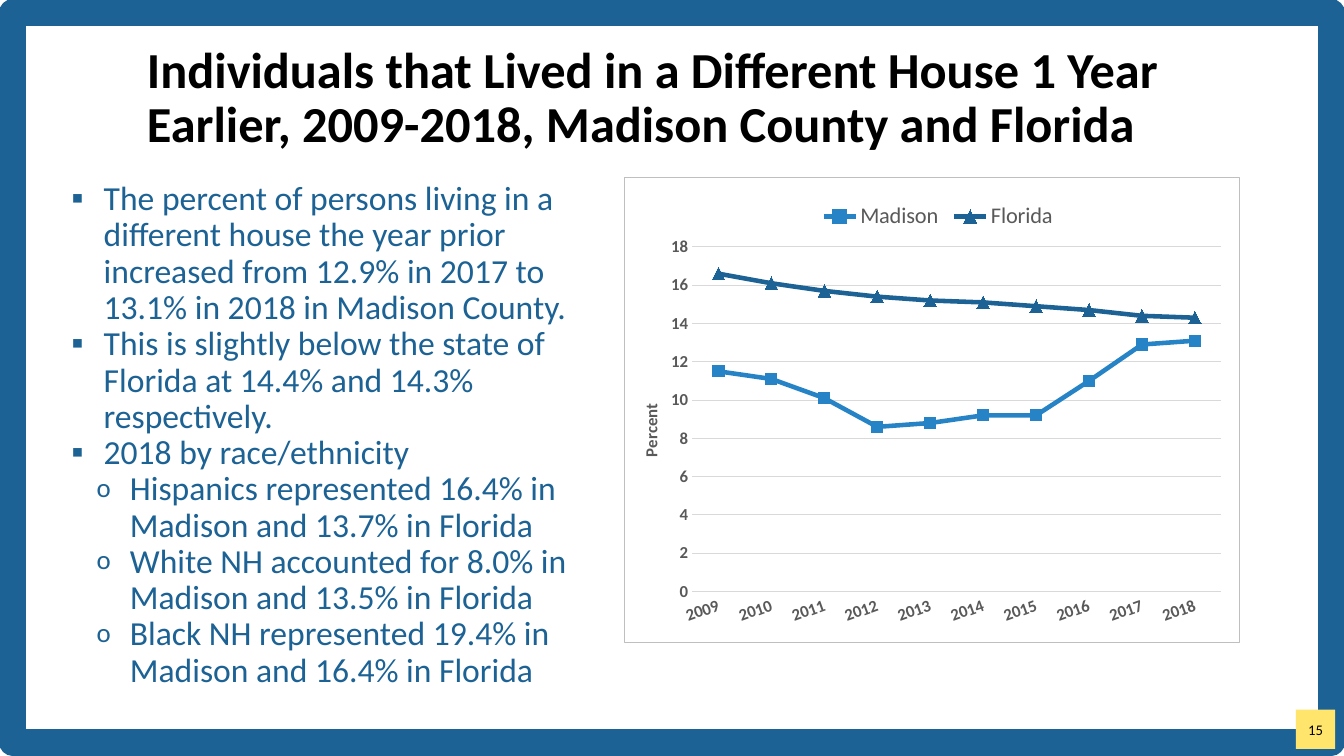
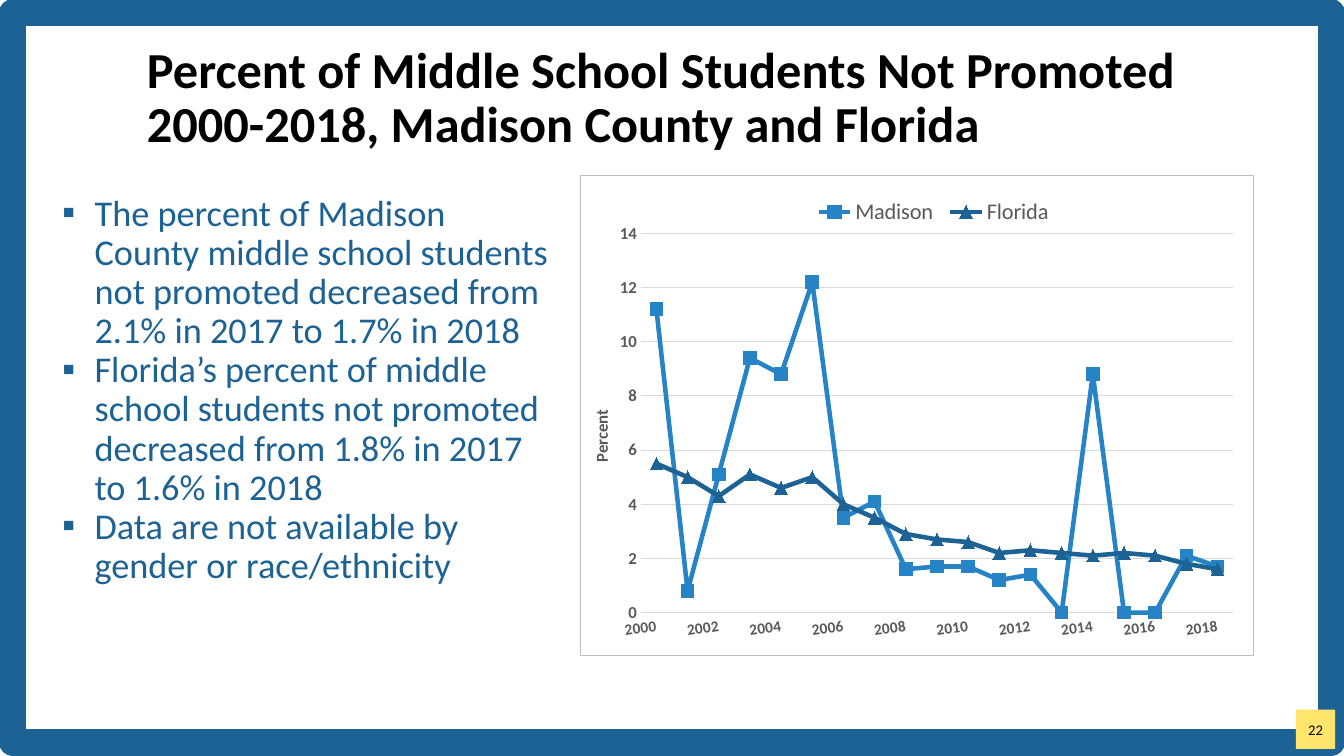
import pptx
import pptx.chart.data
import pptx.dml.color
import pptx.enum.chart
import pptx.enum.shapes
import pptx.enum.text
import pptx.oxml
import pptx.oxml.ns
import pptx.util
from pptx.util import Cm, Pt

FONT = "Calibri"
BLACK, NAVY, SKY, YELLOW = "000000", "1C6294", "2683C6", "FFE56B"
TEXT_GREY, GRID_GREY, BORDER_GREY = "595959", "D9D9D9", "BFBFBF"
MARKER = pptx.enum.chart.XL_MARKER_STYLE
ANCHOR = pptx.enum.text.MSO_ANCHOR

# character, left margin, hanging indent (cm) and size (%) by level
BULLETS = [("▪", 0.94, 0.81, 100), ("o", 1.6, 0.84, 80)]

MOBILITY = dict(
    number="15",
    title="Individuals that Lived in a Different House 1 Year Earlier, "
          "2009-2018, Madison County and Florida",
    body_box=(1.42, 4.45, 13.94, 13.61),
    body_size=24,
    items=[
        (0, "The percent of persons living in a different house the year prior "
            "increased from 12.9% in 2017 to 13.1% in 2018 in Madison County."),
        (0, "This is slightly below the state of Florida at 14.4% and 14.3% "
            "respectively."),
        (0, "2018 by race/ethnicity"),
        (1, "Hispanics represented 16.4% in Madison and 13.7% in Florida"),
        (1, "White NH accounted for 8.0% in Madison and 13.5% in Florida"),
        (1, "Black NH represented 19.4% in Madison and 16.4% in Florida"),
    ],
    chart=dict(
        box=(15.72, 4.45, 15.54, 11.76),
        years=range(2009, 2019),
        madison=(11.5, 11.1, 10.1, 8.6, 8.8, 9.2, 9.2, 11, 12.9, 13.1),
        florida=(16.6, 16.1, 15.7, 15.4, 15.2, 15.1, 14.9, 14.7, 14.4, 14.3),
        top=18, year_size=12, year_angle=-20, square_size=8,
        plot_layout=(0.11, 0.15, 0.86, 0.74),
        legend_layout=(0.31, 0.05, 0.4, 0.07),
        axis_title_layout=(0.02, 0.48),
    ),
)

PROMOTION = dict(
    number="22",
    title="Percent of Middle School Students Not Promoted 2000-2018, "
          "Madison County and Florida",
    body_box=(1.19, 4.78, 12.93, 11.94),
    body_size=25.9,
    items=[
        (0, "The percent of Madison County middle school students not promoted "
            "decreased from 2.1% in 2017 to 1.7% in 2018"),
        (0, "Florida’s percent of middle school students not promoted decreased "
            "from 1.8% in 2017 to 1.6% in 2018"),
        (0, "Data are not available by gender or race/ethnicity"),
    ],
    chart=dict(
        box=(14.61, 4.42, 16.99, 12.12),
        years=range(2000, 2019),
        madison=(11.2, 0.8, 5.1, 9.4, 8.8, 12.2, 3.5, 4.1, 1.6, 1.7, 1.7, 1.2,
                 1.4, 0, 8.8, 0, 0, 2.1, 1.7),
        florida=(5.5, 5, 4.3, 5.1, 4.6, 5, 4, 3.5, 2.9, 2.7, 2.6, 2.2, 2.3, 2.2,
                 2.1, 2.2, 2.1, 1.8, 1.6),
        top=14, year_size=11, year_angle=-8, square_size=9,
        plot_layout=(0.09, 0.12, 0.88, 0.79),
        legend_layout=(0.34, 0.04, 0.37, 0.07),
        axis_title_layout=(0.01, 0.48),
    ),
)


def rgb(value):
    return pptx.dml.color.RGBColor.from_string(value)


def set_all(obj, **values):
    for name, value in values.items():
        setattr(obj, name, value)


def style_font(font, size, color, bold=False):
    set_all(font, name=FONT, size=Pt(size), bold=bold)
    font.color.rgb = rgb(color)


def style_line(line, color, width):
    line.color.rgb = rgb(color)
    line.width = Pt(width)


def xml(text):
    return pptx.oxml.parse_xml(text)


def place(shape, box):
    for name, value in zip(("left", "top", "width", "height"), box):
        setattr(shape, name, Cm(value))


def add_rect(s, box):
    sp = s.shapes.add_shape(pptx.enum.shapes.MSO_SHAPE.RECTANGLE,
                            *(Cm(v) for v in box))
    sp.shadow.inherit = False
    return sp


def add_frame(s, number):
    """Draw the slide border and the numbered badge in its corner."""
    border = add_rect(s, (0.32, 0.32, 33.23, 18.39))
    border.fill.background()
    style_line(border.line, NAVY, 19)

    badge = add_rect(s, (32.66, 17.88, 0.99, 0.99))
    badge.fill.solid()
    badge.fill.fore_color.rgb = rgb(YELLOW)
    badge.line.fill.background()
    tf = badge.text_frame
    set_all(tf, margin_left=0, margin_right=0, margin_top=0, margin_bottom=0,
            vertical_anchor=ANCHOR.MIDDLE)
    add_text(tf.paragraphs[0], number, 10.5, BLACK,
             alignment=pptx.enum.text.PP_ALIGN.CENTER)


def add_text(p, text, size, color, bold=False, **paragraph_format):
    set_all(p, **paragraph_format)
    r = p.add_run()
    r.text = text
    style_font(r.font, size, color, bold)


def fill_title(s, text):
    title = s.shapes.title
    place(title, (3.45, 1.17, 29.21, 2.67))
    tf = title.text_frame
    set_all(tf, word_wrap=True, auto_size=pptx.enum.text.MSO_AUTO_SIZE.NONE,
            vertical_anchor=ANCHOR.MIDDLE)
    add_text(tf.paragraphs[0], text, 36, BLACK, bold=True, line_spacing=0.9,
             alignment=pptx.enum.text.PP_ALIGN.LEFT)


def add_bullet(p, level):
    char, margin, hanging, percent = BULLETS[level]
    p.level = level
    pPr = p._p.get_or_add_pPr()
    pPr.set("marL", str(Cm(margin)))
    pPr.set("indent", str(-Cm(hanging)))
    ns = pptx.oxml.ns.nsdecls("a")
    for element in (
        f'<a:buClr {ns}><a:srgbClr val="{NAVY}"/></a:buClr>',
        f'<a:buSzPct {ns} val="{percent * 1000}"/>',
        f'<a:buFont {ns} typeface="{FONT}"/>',
        f'<a:buChar {ns} char="{char}"/>',
    ):
        pPr.append(xml(element))


def fill_body(s, box, items, size):
    body = s.placeholders[1]
    place(body, box)
    tf = body.text_frame
    set_all(tf, word_wrap=True, auto_size=pptx.enum.text.MSO_AUTO_SIZE.NONE,
            vertical_anchor=ANCHOR.TOP)
    for i, (level, text) in enumerate(items):
        p = tf.add_paragraph() if i else tf.paragraphs[0]
        add_bullet(p, level)
        add_text(p, text, size, NAVY, line_spacing=0.9, space_before=Pt(0))


def set_layout(parent, values, after=None, inner=False):
    """Fix a chart part at fractions of the chart: x, y and optionally w, h."""
    for old in parent.findall(pptx.oxml.ns.qn("c:layout")):
        parent.remove(old)
    target = '<c:layoutTarget val="inner"/>' if inner else ""
    modes = '<c:xMode val="edge"/><c:yMode val="edge"/>'
    sizes = "".join(f'<c:{k} val="{v}"/>' for k, v in zip("xywh", values))
    layout = xml(f'<c:layout {pptx.oxml.ns.nsdecls("c")}><c:manualLayout>'
                 f'{target}{modes}{sizes}</c:manualLayout></c:layout>')
    if after:
        parent.find(pptx.oxml.ns.qn(after)).addnext(layout)
    else:
        parent.insert(0, layout)


def add_chart_border(chart):
    ns = pptx.oxml.ns.nsdecls("c", "a")
    chart.element.xpath("c:txPr")[0].addprevious(xml(
        f'<c:spPr {ns}><a:noFill/><a:ln w="{Pt(0.75)}"><a:solidFill>'
        f'<a:srgbClr val="{BORDER_GREY}"/></a:solidFill></a:ln></c:spPr>'))


def style_axes(chart, top, year_size, year_angle):
    years, percent = chart.category_axis, chart.value_axis
    for axis, size in ((years, year_size), (percent, 12)):
        set_all(axis, major_tick_mark=pptx.enum.chart.XL_TICK_MARK.NONE,
                minor_tick_mark=pptx.enum.chart.XL_TICK_MARK.NONE)
        style_font(axis.tick_labels.font, size, TEXT_GREY, bold=True)
    years.has_major_gridlines = False
    style_line(years.format.line, GRID_GREY, 0.75)
    label_body = chart.element.xpath(".//c:catAx/c:txPr/a:bodyPr")[0]
    label_body.set("rot", str(year_angle * 60000))

    set_all(percent, minimum_scale=0, maximum_scale=top, major_unit=2,
            has_major_gridlines=True)
    style_line(percent.major_gridlines.format.line, GRID_GREY, 0.75)
    percent.format.line.fill.background()
    p = percent.axis_title.text_frame.paragraphs[0]
    add_text(p, "Percent", 12, TEXT_GREY, bold=True)


def style_series(series, color, marker, marker_size):
    series.smooth = False
    style_line(series.format.line, color, 3.25)
    set_all(series.marker, style=marker, size=marker_size)
    series.marker.format.fill.solid()
    series.marker.format.fill.fore_color.rgb = rgb(color)
    style_line(series.marker.format.line, color, 0.75)


def add_line_chart(s, box, years, madison, florida, top, year_size, year_angle,
                   square_size, plot_layout, legend_layout, axis_title_layout):
    data = pptx.chart.data.CategoryChartData()
    data.categories = [str(year) for year in years]
    data.add_series("Madison", madison)
    data.add_series("Florida", florida)
    chart = s.shapes.add_chart(pptx.enum.chart.XL_CHART_TYPE.LINE_MARKERS,
                               *(Cm(v) for v in box), data).chart
    set_all(chart, has_title=False, has_legend=True)
    style_font(chart.font, 10, BLACK)
    set_all(chart.legend, include_in_layout=False,
            position=pptx.enum.chart.XL_LEGEND_POSITION.BOTTOM)
    style_font(chart.legend.font, 16, TEXT_GREY)
    style_axes(chart, top, year_size, year_angle)

    plot = chart.plots[0]
    plot.vary_by_categories = False
    style_series(plot.series[0], SKY, MARKER.SQUARE, square_size)
    style_series(plot.series[1], NAVY, MARKER.TRIANGLE, 9)

    root = chart.element
    set_layout(root.xpath(".//c:plotArea")[0], plot_layout, inner=True)
    set_layout(root.xpath(".//c:legend")[0], legend_layout, "c:legendPos")
    set_layout(root.xpath(".//c:valAx/c:title")[0], axis_title_layout, "c:tx")
    add_chart_border(chart)


def add_chart_slide(prs, number, title, body_box, body_size, items, chart):
    s = prs.slides.add_slide(prs.slide_layouts[1])
    add_frame(s, number)
    fill_title(s, title)
    fill_body(s, body_box, items, body_size)
    add_line_chart(s, **chart)


def main():
    prs = pptx.Presentation()
    set_all(prs, slide_width=Cm(33.87), slide_height=Cm(19.05))
    for content in (MOBILITY, PROMOTION):
        add_chart_slide(prs, **content)
    prs.save("out.pptx")


if __name__ == "__main__":
    main()
